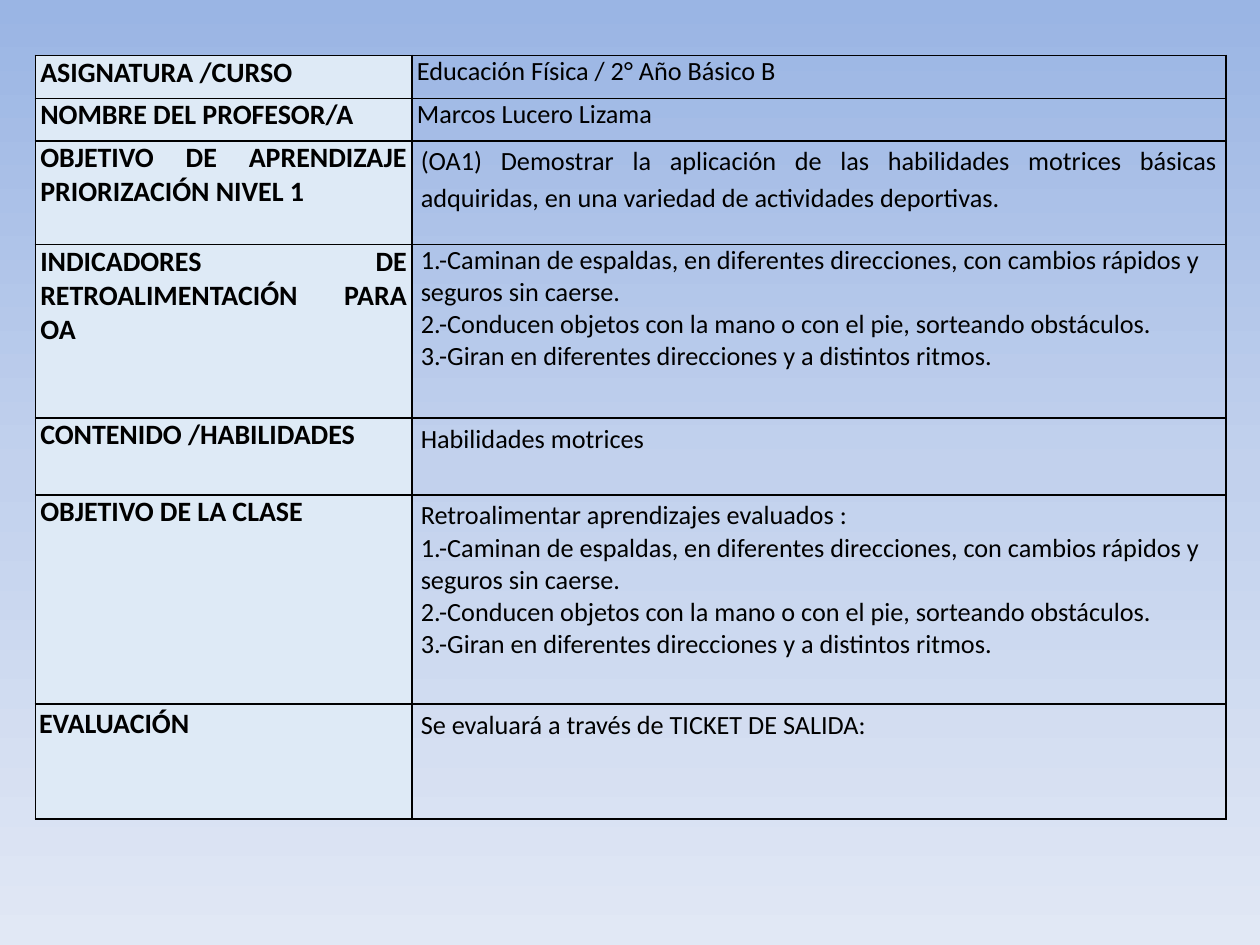
from copy import deepcopy

from lxml.etree import SubElement
from pptx import Presentation
from pptx.dml.color import RGBColor
from pptx.enum.text import PP_ALIGN
from pptx.oxml.ns import qn
from pptx.util import Inches, Pt

COLORS = {
    "sky_top": "9AB5E4",
    "sky_middle": "C2D1ED",
    "sky_bottom": "E1E8F5",
    "label": "DEEAF6",
    "ink": "000000",
}
COLUMN_WIDTHS = [2.99, 6.46]
INDICATORS = [
    "1.-Caminan de espaldas, en diferentes direcciones, con cambios rápidos y seguros sin caerse.",
    "2.-Conducen objetos con la mano o con el pie, sorteando obstáculos.",
    "3.-Giran en diferentes direcciones y a distintos ritmos.",
]
# Row height, label, side inset of the content, spaced opening lines, plain list lines
ROWS = [
    (0.34, "ASIGNATURA /CURSO", 0.04, ["Educación Física / 2° Año Básico B"], []),
    (0.34, "NOMBRE DEL PROFESOR/A", 0.04, ["Marcos Lucero Lizama"], []),
    (0.82, "OBJETIVO DE APRENDIZAJE PRIORIZACIÓN NIVEL 1", 0.07,
     ["(OA1) Demostrar la aplicación de las habilidades motrices básicas adquiridas, "
      "en una variedad de actividades deportivas."], []),
    (1.38, "INDICADORES DE RETROALIMENTACIÓN PARA OA", 0.07, [], INDICATORS),
    (0.61, "CONTENIDO /HABILIDADES", 0.07, ["Habilidades motrices"], []),
    (1.66, "OBJETIVO DE LA CLASE", 0.07,
     ["Retroalimentar aprendizajes evaluados :"], INDICATORS),
    (0.91, "EVALUACIÓN", 0.07, ["Se evaluará a través de TICKET DE SALIDA:"], []),
]


def format_cell(cell, inset, top=0):
    """Set the insets and draw a thin line on all four sides."""
    cell.margin_left = cell.margin_right = Inches(inset)
    cell.margin_top = cell.margin_bottom = Inches(top)
    properties = cell._tc.get_or_add_tcPr()
    for side in ("lnL", "lnR", "lnT", "lnB"):
        line = SubElement(properties, qn(f"a:{side}"), w=str(Pt(1)))
        fill = SubElement(line, qn("a:solidFill"))
        SubElement(fill, qn("a:srgbClr"), val=COLORS["ink"])


def write_lines(cell, lines, size, bold=False):
    """Write (text, alignment, line spacing) entries, one paragraph each."""
    frame = cell.text_frame
    for index, (text, alignment, spacing) in enumerate(lines):
        para = frame.add_paragraph() if index else frame.paragraphs[0]
        para.text = text
        para.alignment = alignment
        para.line_spacing = spacing
        para.font.name = "Calibri"
        para.font.size = Pt(size)
        para.font.bold = bold
        para.font.color.rgb = RGBColor.from_string(COLORS["ink"])


deck = Presentation()
deck.slide_width, deck.slide_height = Inches(10), Inches(7.5)
page = deck.slides.add_slide(deck.slide_layouts[6])

# Background: three-step vertical gradient
sky = page.background.fill
sky.gradient()
sky.gradient_angle = 270
stop_list = next(page.element.iter(qn("a:gsLst")))
stop_list.insert(1, deepcopy(stop_list[0]))
for index, name in enumerate(("sky_top", "sky_middle", "sky_bottom")):
    stop = sky.gradient_stops[index]
    stop.position = index / 2
    stop.color.rgb = RGBColor.from_string(COLORS[name])

# Lesson plan table
heights = [row[0] for row in ROWS]
plan = page.shapes.add_table(
    len(ROWS), len(COLUMN_WIDTHS), Inches(0.28), Inches(0.44),
    Inches(sum(COLUMN_WIDTHS)), Inches(sum(heights)),
).table
plan.first_row = plan.horz_banding = False
for column, width in zip(plan.columns, COLUMN_WIDTHS):
    column.width = Inches(width)

for index, (height, label, inset, opening, listed) in enumerate(ROWS):
    plan.rows[index].height = Inches(height)
    label_cell, content_cell = plan.rows[index].cells

    is_last = index == len(ROWS) - 1
    format_cell(label_cell, 0.03 if is_last else 0.04, 0.02 if is_last else 0)
    label_cell.fill.solid()
    label_cell.fill.fore_color.rgb = RGBColor.from_string(COLORS["label"])
    write_lines(label_cell, [(label, PP_ALIGN.JUSTIFY, 1.0)], 16, bold=True)

    format_cell(content_cell, inset)
    content_cell.fill.background()
    spacing = 1.15 if inset == 0.07 else 1.0
    lines = [(text, PP_ALIGN.JUSTIFY, spacing) for text in opening]
    lines += [(text, PP_ALIGN.LEFT, 1.0) for text in listed]
    write_lines(content_cell, lines, 15)

deck.save("out.pptx")
